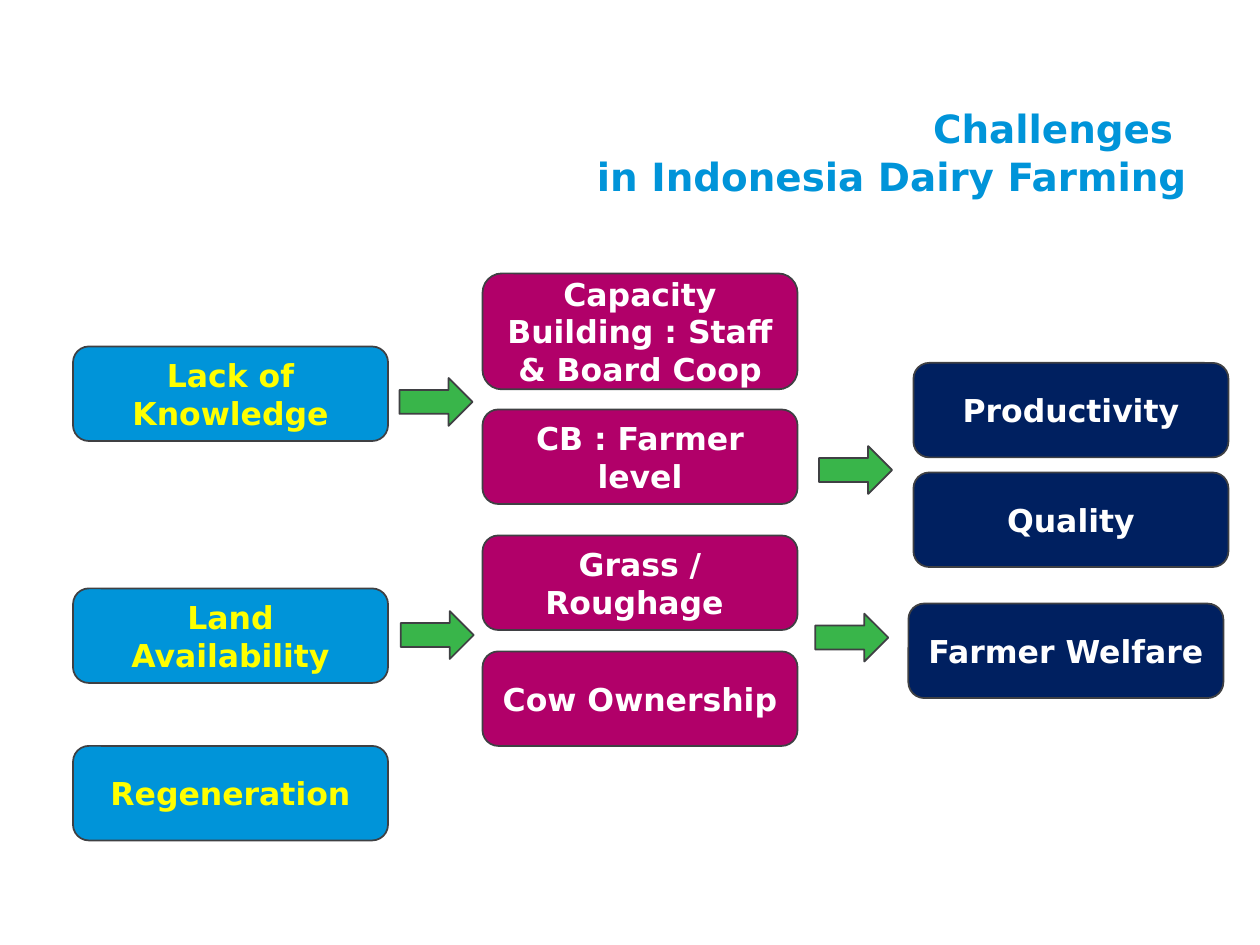
from pptx import Presentation
from pptx.dml.color import RGBColor
from pptx.enum.shapes import MSO_SHAPE
from pptx.enum.text import MSO_ANCHOR, MSO_AUTO_SIZE, PP_ALIGN
from pptx.util import Inches, Pt

BLUE = RGBColor(0x00, 0x94, 0xD9)
MAGENTA = RGBColor(0xB1, 0x00, 0x69)
NAVY = RGBColor(0x00, 0x20, 0x60)
GREEN = RGBColor(0x39, 0xB5, 0x4A)
YELLOW = RGBColor(0xFF, 0xFF, 0x00)
WHITE = RGBColor(0xFF, 0xFF, 0xFF)
OUTLINE = RGBColor(0x3F, 0x40, 0x43)

ROUNDED, ARROW = MSO_SHAPE.ROUNDED_RECTANGLE, MSO_SHAPE.RIGHT_ARROW
TOP, MIDDLE = MSO_ANCHOR.TOP, MSO_ANCHOR.MIDDLE
CENTER, RIGHT = PP_ALIGN.CENTER, PP_ALIGN.RIGHT
NO_FIT = MSO_AUTO_SIZE.NONE

BOX_W, BOX_H = 2.5, 0.75
ARROW_W, ARROW_H = 0.58, 0.38


class Deck:
    font = {"name": "DejaVu Sans", "bold": True}

    def __init__(self, prs):
        self.s = prs.slides.add_slide(prs.slide_layouts[5])

    def add_text(self, p, text, size, color, align):
        p.alignment = align
        r = p.add_run()
        r.text = text
        for key, value in {**self.font, "size": Pt(size)}.items():
            setattr(r.font, key, value)
        r.font.color.rgb = color

    def title(self, lines, x, y, w, h):
        sp = self.s.shapes.title
        place = {"left": x, "top": y, "width": w, "height": h}
        for key, value in place.items():
            setattr(sp, key, Inches(value))
        tf = sp.text_frame
        frame = {"auto_size": NO_FIT, "word_wrap": True, "vertical_anchor": TOP,
                 "margin_left": 0, "margin_right": 0,
                 "margin_top": 0, "margin_bottom": 0}
        for key, value in frame.items():
            setattr(tf, key, value)
        for i, line in enumerate(lines):
            p = tf.add_paragraph() if i else tf.paragraphs[0]
            p.space_before = Pt(1 if i else 0)
            self.add_text(p, line, 22.2, BLUE, RIGHT)

    def shape(self, kind, x, y, w, h, fill):
        sp = self.s.shapes.add_shape(kind, Inches(x), Inches(y), Inches(w), Inches(h))
        sp.shadow.inherit = False
        sp.fill.solid()
        sp.fill.fore_color.rgb = fill
        sp.line.color.rgb = OUTLINE
        sp.line.width = Pt(1)
        return sp

    def box(self, text, x, y, fill, color=WHITE, h=BOX_H):
        tf = self.shape(ROUNDED, x, y, BOX_W, h, fill).text_frame
        tf.word_wrap = True
        tf.vertical_anchor = MIDDLE
        self.add_text(tf.paragraphs[0], text, 18, color, CENTER)

    def arrow(self, x, y):
        self.shape(ARROW, x, y, ARROW_W, ARROW_H, GREEN)


def main():
    prs = Presentation()
    prs.slide_width, prs.slide_height = Inches(10), Inches(7.5)
    deck = Deck(prs)
    deck.title(["Challenges ", "in Indonesia Dairy Farming"], 1.92, 0.83, 7.5, 0.92)

    # Challenges
    for text, y in [("Lack of Knowledge", 2.75), ("Land Availability", 4.67),
                    ("Regeneration", 5.92)]:
        deck.box(text, 0.58, y, BLUE, YELLOW)

    # Responses
    for text, y, h in [("Capacity Building : Staff & Board Coop", 2.17, 0.92),
                       ("CB : Farmer level", 3.25, BOX_H),
                       ("Grass / Roughage ", 4.25, BOX_H),
                       ("Cow Ownership", 5.17, BOX_H)]:
        deck.box(text, 3.83, y, MAGENTA, h=h)

    # Outcomes
    for text, x, y in [("Productivity", 7.25, 2.88), ("Quality", 7.25, 3.75),
                       ("Farmer Welfare", 7.21, 4.79)]:
        deck.box(text, x, y, NAVY)

    # Arrows between the columns
    for x, y in [(3.17, 3), (3.18, 4.85), (6.5, 3.54), (6.47, 4.87)]:
        deck.arrow(x, y)

    prs.save("out.pptx")


if __name__ == "__main__":
    main()
